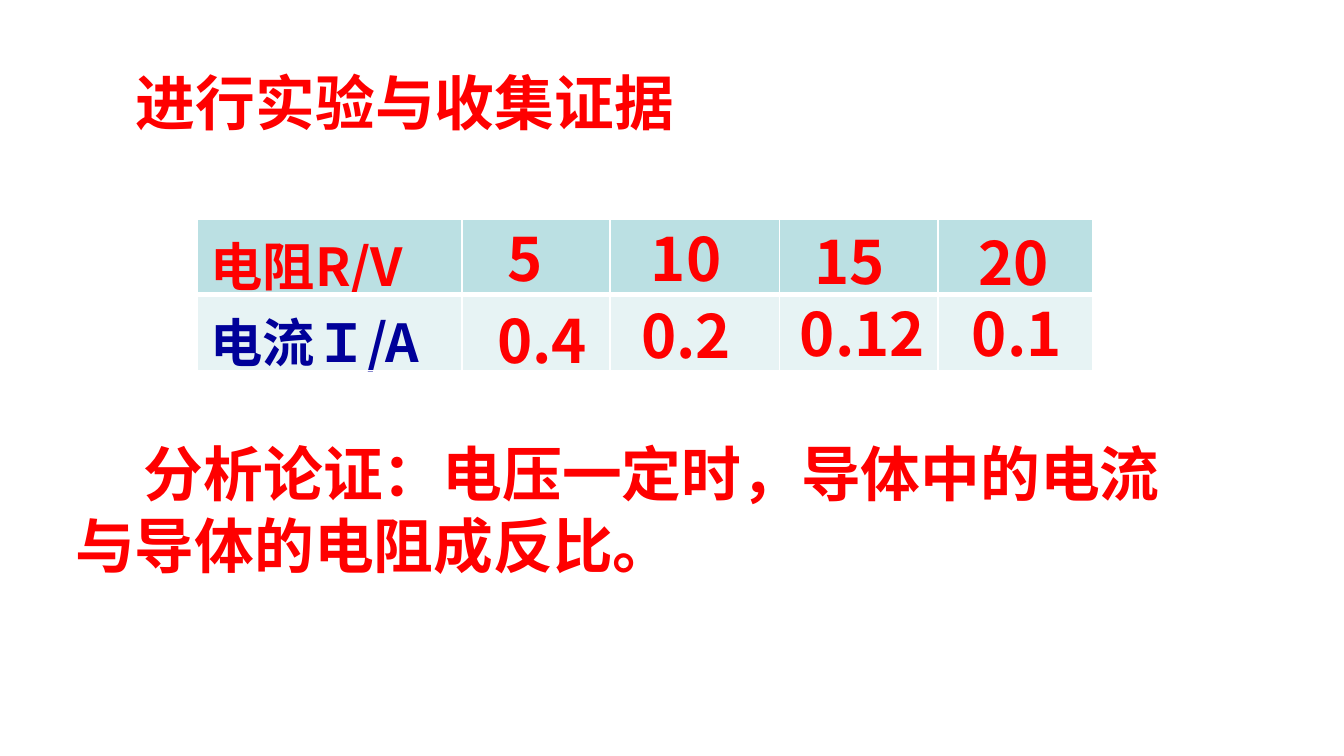
from dataclasses import dataclass

from lxml.etree import SubElement
from pptx import Presentation
from pptx.dml.color import RGBColor
from pptx.enum.text import MSO_ANCHOR, MSO_AUTO_SIZE, PP_ALIGN
from pptx.oxml.ns import qn
from pptx.util import Cm, Pt

FONT = "Noto Sans CJK SC"
RED, NAVY, WHITE = "FF0000", "000099", "FFFFFF"
FRAME = {
    "word_wrap": True,
    "auto_size": MSO_AUTO_SIZE.NONE,
    "vertical_anchor": MSO_ANCHOR.MIDDLE,
    "margin_left": Cm(0.18),
    "margin_right": Cm(0.18),
    "margin_top": Cm(0.1),
    "margin_bottom": Cm(0.1),
}
# The tall glyphs may run over the lower edge of the row
CELL = {"margin_top": Cm(0.13), "margin_bottom": Cm(-0.13)}


@dataclass
class Box:
    text: str
    left: float
    top: float
    width: float
    height: float = 1.55


@dataclass
class Row:
    label: str
    color: str
    fill: str


def paint(target, code: str) -> None:
    target.rgb = RGBColor.from_string(code)


def assign(target, values: dict) -> None:
    for name, value in values.items():
        setattr(target, name, value)


def write(frame, text: str, size: int, color: str, indent: float = 0) -> None:
    para = frame.paragraphs[0]
    para.alignment = PP_ALIGN.LEFT
    if indent:
        props = para._p.get_or_add_pPr()
        props.set("marL", "0")
        props.set("indent", str(Cm(indent)))
    run = para.add_run()
    run.text = text
    assign(run.font, {"name": FONT, "size": Pt(size), "bold": True})
    paint(run.font.color, color)
    SubElement(run._r.get_or_add_rPr(), qn("a:ea")).set("typeface", FONT)


def place(shape, box: Box, indent: float = 0) -> None:
    assign(shape, {"left": Cm(box.left), "top": Cm(box.top),
                   "width": Cm(box.width), "height": Cm(box.height)})
    assign(shape.text_frame, FRAME)
    write(shape.text_frame, box.text, 32, RED, indent)


def label(shapes, box: Box, indent: float = 0) -> None:
    place(shapes.add_textbox(0, 0, 0, 0), box, indent)


def edge(cell, widths: dict) -> None:
    props = cell._tc.get_or_add_tcPr()
    for at, (side, width) in enumerate(widths.items()):
        line = props.makeelement(qn(f"a:{side}"), {"w": str(Pt(width))})
        fill = SubElement(line, qn("a:solidFill"))
        SubElement(fill, qn("a:srgbClr")).set("val", WHITE)
        props.insert(at, line)


def grid(shapes, rows: list[Row], cols: list[float], height: float) -> None:
    table = shapes.add_table(len(rows), len(cols), Cm(3.73), Cm(4.14),
                             Cm(sum(cols)), Cm(height * len(rows))).table
    for col, width in zip(table.columns, cols):
        col.width = Cm(width)
    for y, row in enumerate(rows):
        table.rows[y].height = Cm(height)
        for x in range(len(cols)):
            cell = table.cell(y, x)
            assign(cell, CELL)
            cell.fill.solid()
            paint(cell.fill.fore_color, row.fill)
            edge(cell, {"lnL": 1, "lnR": 1, "lnT": 3 if y else 1,
                        "lnB": 1 if y else 3})
        write(table.cell(y, 0).text_frame, row.label, 28, row.color)


deck = Presentation()
deck.slide_width, deck.slide_height = Cm(25.4), Cm(14.28)
slide = deck.slides.add_slide(deck.slide_layouts[5])
shapes = slide.shapes

# Heading
place(shapes.title, Box("进行实验与收集证据", 1.09, 1.14, 14.4), 1.3)

# Table of resistance and current
ROWS = [Row("电阻R/V", RED, "BBE0E3"), Row("电流Ｉ/A", NAVY, "E7F3F4")]
grid(shapes, ROWS, [5, 2.8, 3.2, 3, 2.92], 1.43)

# Readings, one group for each column
PAIRS = [
    (Box("5", 9.42, 4.09, 1.75), Box("0.4", 9.22, 5.64, 2.34)),
    (Box("10", 12.12, 4.09, 2.64), Box("0.2", 11.94, 5.54, 2.64)),
    (Box("15", 15.21, 4.14, 2.34), Box("0.12", 14.94, 5.51, 2.82)),
    (Box("20", 18.31, 4.17, 2.21), Box("0.1", 18.19, 5.51, 2.72)),
]
for pair in PAIRS:
    group = shapes.add_group_shape()
    for box in pair:
        label(group.shapes, box)

# Conclusion
label(shapes, Box("分析论证：电压一定时，导体中的电流与导体的电阻成反比。",
                  1.24, 8.15, 21.92, 2.92), 1.3)

deck.save("out.pptx")
